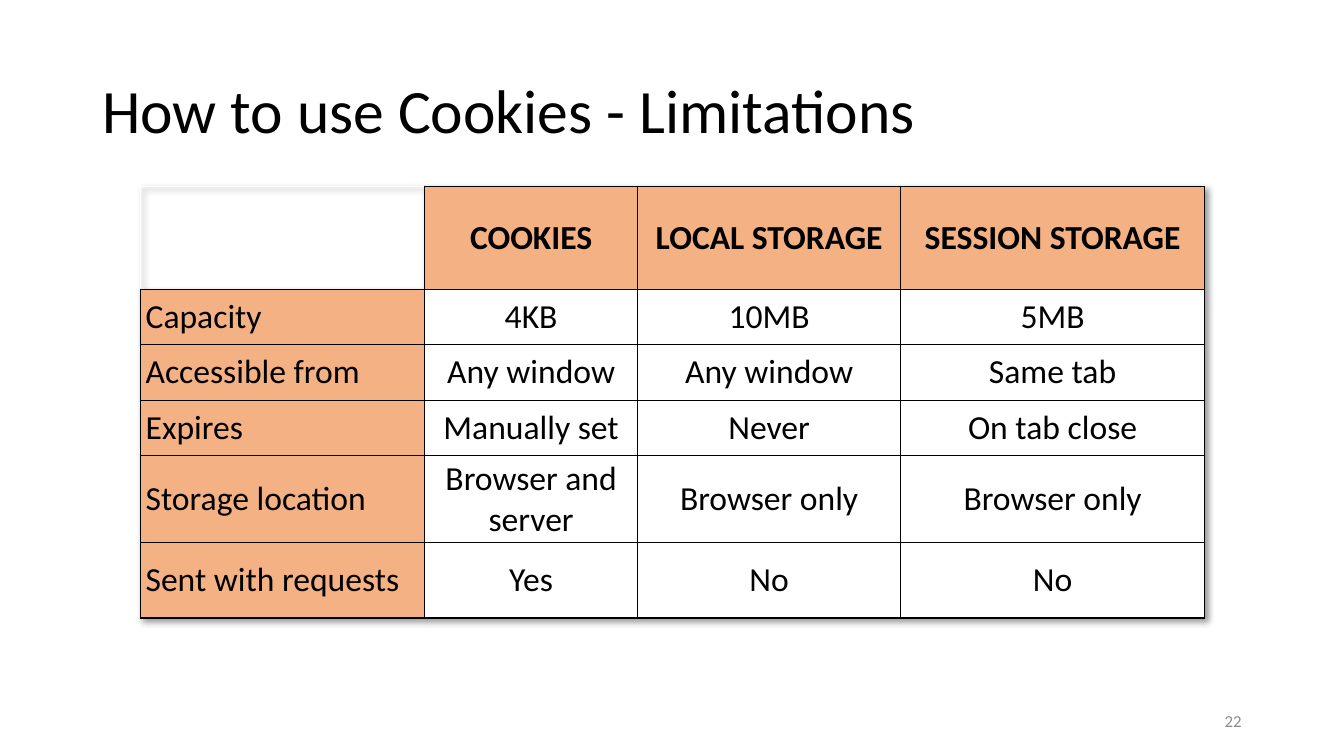
from dataclasses import dataclass

from lxml import etree
from pptx import Presentation
from pptx.dml.color import RGBColor
from pptx.enum.text import MSO_ANCHOR, PP_ALIGN
from pptx.oxml.ns import qn
from pptx.util import Pt

MIDDLE = MSO_ANCHOR.MIDDLE
LEFT, CENTER, RIGHT = PP_ALIGN.LEFT, PP_ALIGN.CENTER, PP_ALIGN.RIGHT


@dataclass(frozen=True)
class Theme:
    font: str = "Calibri"
    ink: str = "000000"
    muted: str = "8C8C8C"
    accent: str = "F4B183"
    paper: str = "FFFFFF"
    title_size: int = 44
    table_size: int = 24
    number_size: int = 12
    border_width: int = 1


THEME = Theme()
COLUMN_WIDTHS = (203, 152, 188, 217)
ROW_HEIGHTS = (73.5, 39.6, 39.6, 39.6, 54, 54)
ROWS = (
    ("", "COOKIES", "LOCAL STORAGE", "SESSION STORAGE"),
    ("Capacity", "4KB", "10MB", "5MB"),
    ("Accessible from", "Any window", "Any window", "Same tab"),
    ("Expires", "Manually set", "Never", "On tab close"),
    ("Storage location", "Browser and server", "Browser only", "Browser only"),
    ("Sent with requests", "Yes", "No", "No"),
)


def write_text(frame, text, size, color, align, bold=False):
    frame.text = text
    para = frame.paragraphs[0]
    para.alignment = align
    para.font.size = Pt(size)
    for span in para.runs:
        span.font.name = THEME.font
        span.font.size = Pt(size)
        span.font.bold = bold
        span.font.color.rgb = RGBColor.from_string(color)
    return para


def add_label(page, box, text, size, color, align):
    label = page.shapes.add_textbox(*map(Pt, box))
    frame = label.text_frame
    frame.word_wrap = True
    frame.vertical_anchor = MIDDLE
    return write_text(frame, text, size, color, align)


def add_title(page, box):
    para = add_label(page, box, "How to use Cookies - Limitations",
                     THEME.title_size, THEME.ink, LEFT)
    para.line_spacing = 0.9


def add_page_number(page, box):
    add_label(page, box, "22", THEME.number_size, THEME.muted, RIGHT)


def set_borders(cell, sides):
    properties = cell._tc.get_or_add_tcPr()
    for position, side in enumerate(sides):
        line = etree.Element(qn("a:ln" + side), w=str(Pt(THEME.border_width)))
        fill = etree.SubElement(line, qn("a:solidFill"))
        etree.SubElement(fill, qn("a:srgbClr"), val=THEME.ink)
        properties.insert(position, line)


def add_table_shadow(table):
    effects = etree.Element(qn("a:effectLst"))
    shadow = etree.SubElement(effects, qn("a:outerShdw"), blurRad=str(Pt(4)),
                              dist=str(Pt(3)), dir="2700000", algn="tl", rotWithShape="0")
    color = etree.SubElement(shadow, qn("a:prstClr"), val="black")
    etree.SubElement(color, qn("a:alpha"), val="40000")
    table._tbl.tblPr.insert(0, effects)


def style_cell(cell, text, row, column):
    cell.vertical_anchor = MIDDLE
    cell.margin_left = cell.margin_right = Pt(3.6)
    cell.margin_top = cell.margin_bottom = Pt(2.16)
    if not text:
        cell.fill.background()
        set_borders(cell, "RB")
        return
    heading = row == 0 or column == 0
    cell.fill.solid()
    cell.fill.fore_color.rgb = RGBColor.from_string(THEME.accent if heading else THEME.paper)
    write_text(cell.text_frame, text, THEME.table_size, THEME.ink,
               LEFT if column == 0 else CENTER, bold=row == 0)
    set_borders(cell, "LRTB")


def add_comparison(page, box):
    left, top, width, height = map(Pt, box)
    table = page.shapes.add_table(len(ROWS), len(COLUMN_WIDTHS), left, top, width, height).table
    table.first_row = False
    table.horz_banding = False
    for column, share in zip(table.columns, COLUMN_WIDTHS):
        column.width = int(width * share / sum(COLUMN_WIDTHS))
    for row, row_height in zip(table.rows, ROW_HEIGHTS):
        row.height = Pt(row_height)
    for row, texts in enumerate(ROWS):
        for column, text in enumerate(texts):
            style_cell(table.cell(row, column), text, row, column)
    add_table_shadow(table)


def main():
    deck = Presentation()
    deck.slide_width, deck.slide_height = Pt(960), Pt(540)
    page = deck.slides.add_slide(deck.slide_layouts[6])
    add_title(page, (66, 28.8, 828, 104.4))
    add_comparison(page, (100.4, 133.2, 760, sum(ROW_HEIGHTS)))
    add_page_number(page, (678, 500.4, 216, 28.8))
    deck.save("out.pptx")


if __name__ == "__main__":
    main()
